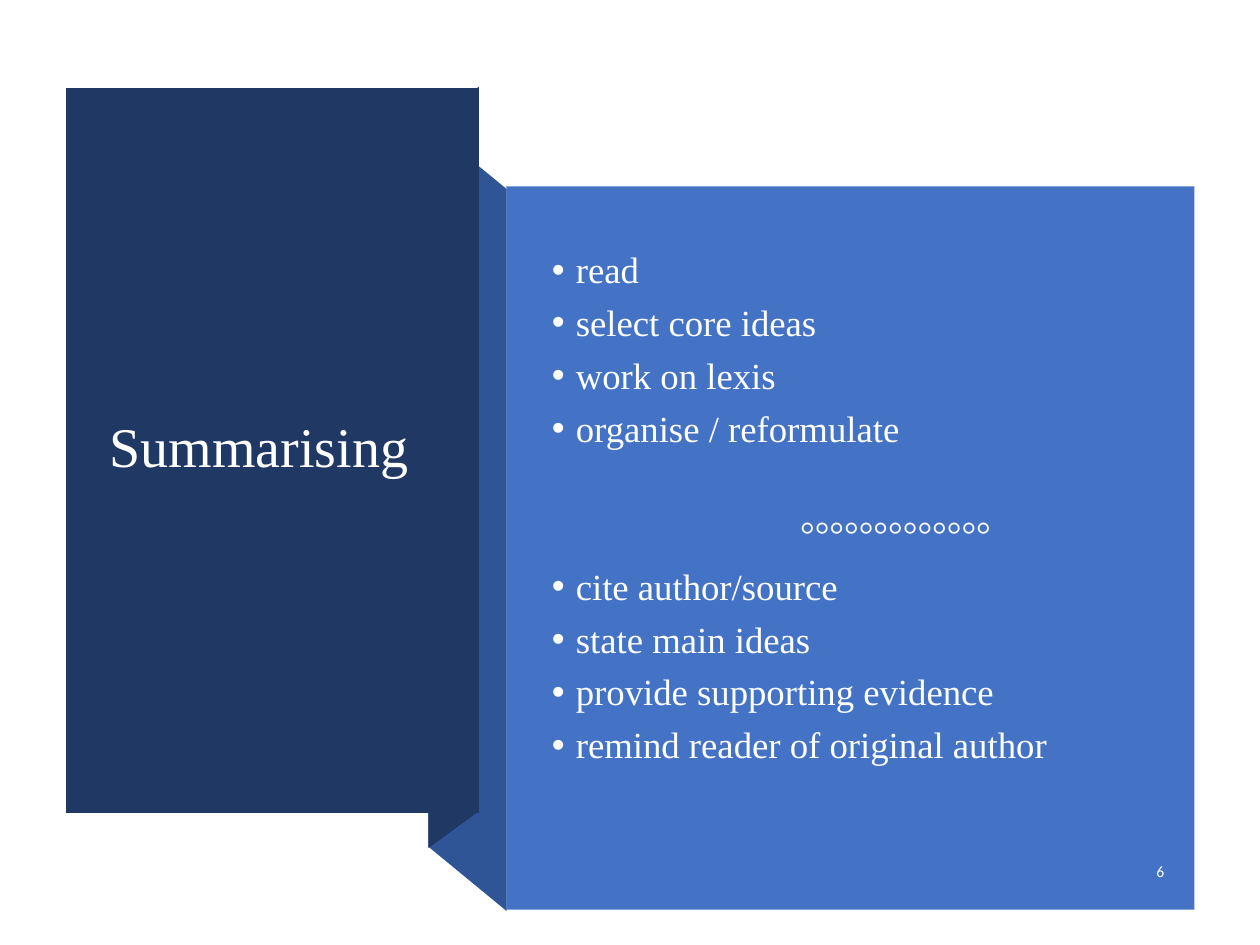
from lxml import etree
from pptx import Presentation
from pptx.dml.color import RGBColor
from pptx.enum.shapes import MSO_SHAPE
from pptx.enum.text import MSO_ANCHOR, MSO_AUTO_SIZE, PP_ALIGN
from pptx.oxml.ns import qn
from pptx.util import Inches, Pt

TITLE = "Summarising"
READING_STEPS = ["read", "select core ideas", "work on lexis", "organise / reformulate"]
SEPARATOR = "°" * 13
WRITING_STEPS = ["cite author/source", "state main ideas", "provide supporting evidence",
                 "remind reader of original author"]
PAGE_NUMBER = "6"

SERIF, SANS = "Times New Roman", "Calibri"
WHITE, SOFT_WHITE = "FFFFFF", "FEFFFF"
NAVY, MID_BLUE, BLUE = "203864", "2F5597", "4472C4"

# Ribbon outlines, back to front, in inches
RIBBON = [
    (MID_BLUE, [(4.02, 7.23), (3.4, 6.72), (3.4, 0.99), (4.02, 1.5)]),
    (NAVY, [(3.8, 6.44), (3.4, 6.73), (3.4, 0.98), (3.8, 0.69)]),
    (NAVY, [(0.52, 0.7), (3.8, 0.7), (3.8, 6.45), (0.52, 6.45)]),
]
PANEL_BOX = (4.02, 1.48, 5.46, 5.74)
TITLE_BOX = (0.77, 1.07, 2.78, 4.99)
BODY_BOX = (4.28, 1.88, 4.88, 4.74)
NUMBER_BOX = (8.78, 6.75, 0.56, 0.35)

BULLET_INDENT = 0.19
SEPARATOR_INDENT = 1.97
SPACE_BEFORE = 7.5
LINE_PITCH = 30  # one 21 pt line with its space before


def color(hex_value):
    return RGBColor.from_string(hex_value)


def paint(shape, fill):
    shape.fill.solid()
    shape.fill.fore_color.rgb = color(fill)
    shape.line.fill.background()
    shape.shadow.inherit = False


def place(shape, box):
    shape.left, shape.top, shape.width, shape.height = map(Inches, box)
    frame = shape.text_frame
    frame.word_wrap = True
    frame.auto_size = MSO_AUTO_SIZE.NONE
    frame.vertical_anchor = MSO_ANCHOR.MIDDLE
    return frame


def write(paragraph, text, size, font_name, font_color, align=PP_ALIGN.LEFT):
    paragraph.alignment = align
    paragraph.line_spacing = 0.9
    run = paragraph.add_run()
    run.text = text
    run.font.size = Pt(size)
    run.font.name = font_name
    run.font.color.rgb = color(font_color)


def indent(paragraph, left, bullet):
    """Set the left margin, with a hanging bullet or with none."""
    properties = paragraph._p.get_or_add_pPr()
    properties.set("marL", str(Inches(left)))
    properties.set("indent", str(-Inches(left) if bullet else 0))
    if bullet:
        etree.SubElement(properties, qn("a:buFont")).set("typeface", "Arial")
        etree.SubElement(properties, qn("a:buChar")).set("char", "•")
    else:
        etree.SubElement(properties, qn("a:buNone"))


def bring_to_front(shape):
    shape.element.getparent().append(shape.element)


def add_ribbon(shapes):
    for fill, points in RIBBON:
        corners = [(Inches(x), Inches(y)) for x, y in points]
        builder = shapes.build_freeform(*corners[0])
        builder.add_line_segments(corners[1:], close=True)
        paint(builder.convert_to_shape(), fill)
    paint(shapes.add_shape(MSO_SHAPE.RECTANGLE, *map(Inches, PANEL_BOX)), BLUE)


def fill_body(body):
    frame = place(body, BODY_BOX)
    frame.margin_bottom = Inches(0.05) + Pt(LINE_PITCH)
    for index, text in enumerate([*READING_STEPS, SEPARATOR, *WRITING_STEPS]):
        paragraph = frame.add_paragraph() if index else frame.paragraphs[0]
        is_step = text != SEPARATOR
        write(paragraph, text, 21, SERIF, SOFT_WHITE)
        paragraph.space_before = Pt(SPACE_BEFORE if is_step else SPACE_BEFORE + LINE_PITCH)
        indent(paragraph, BULLET_INDENT if is_step else SEPARATOR_INDENT, is_step)


def main():
    presentation = Presentation()
    presentation.slide_width, presentation.slide_height = Inches(10), Inches(7.5)
    slide = presentation.slides.add_slide(presentation.slide_layouts[1])
    title, body = slide.shapes.title, slide.placeholders[1]

    add_ribbon(slide.shapes)
    write(place(title, TITLE_BOX).paragraphs[0], TITLE, 32, SERIF, WHITE)
    fill_body(body)
    for placeholder in (title, body):
        bring_to_front(placeholder)

    number = slide.shapes.add_textbox(*map(Inches, NUMBER_BOX))
    paragraph = place(number, NUMBER_BOX).paragraphs[0]
    write(paragraph, PAGE_NUMBER, 9, SANS, WHITE, PP_ALIGN.RIGHT)
    paragraph.space_after = Pt(6)

    presentation.save("out.pptx")


if __name__ == "__main__":
    main()
